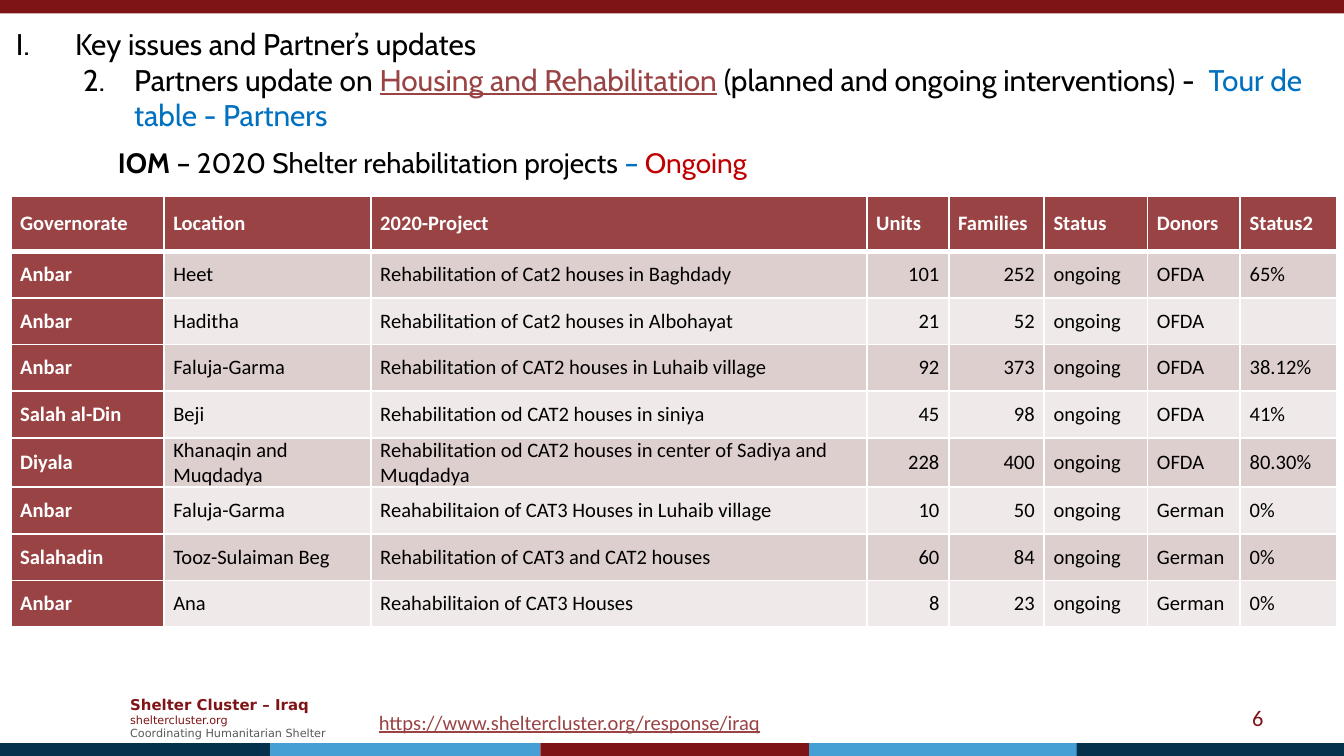
from dataclasses import dataclass

import lxml.etree
import pptx
import pptx.dml.color
import pptx.enum.shapes
import pptx.enum.text
import pptx.oxml.ns
import pptx.util
from pptx.util import Inches

COLORS = {
    "maroon": "7F1416", "brick": "994345", "navy": "04314C", "sky": "459FD5",
    "blue": "0070C0", "red": "C00000", "gray": "595959", "black": "000000",
    "white": "FFFFFF", "band_dark": "DECFCF", "band_light": "EFE9E9",
}
ALIGN = pptx.enum.text.PP_ALIGN
ANCHOR = pptx.enum.text.MSO_ANCHOR


@dataclass
class Span:
    text: str
    color: str = "black"
    bold: bool = False
    underline: bool = False


@dataclass
class Para:
    spans: list[Span]
    font: str
    size: float
    align: ALIGN = ALIGN.LEFT
    margin: float = 0
    indent: float = 0
    level: int = 0
    numbering: str = ""
    start: int = 1


def rgb(name: str):
    return pptx.dml.color.RGBColor.from_string(COLORS[name])


def style(font, span: Span) -> None:
    font.color.rgb = rgb(span.color)
    font.bold = span.bold
    font.underline = span.underline


def write_para(paragraph, para: Para) -> None:
    paragraph.alignment = para.align
    paragraph.level = para.level
    properties = paragraph._p.get_or_add_pPr()
    properties.set("marL", str(Inches(para.margin)))
    properties.set("indent", str(Inches(para.indent)))
    if para.numbering:
        number = lxml.etree.SubElement(properties, pptx.oxml.ns.qn("a:buAutoNum"), type=para.numbering)
        if para.start > 1:
            number.set("startAt", str(para.start))
    paragraph.font.name = para.font
    paragraph.font.size = pptx.util.Pt(para.size)
    if len(para.spans) == 1:
        style(paragraph.font, para.spans[0])
    for span in para.spans:
        run = paragraph.add_run()
        run.text = span.text
        if len(para.spans) > 1:
            style(run.font, span)


def add_text(page, left: float, top: float, width: float, height: float,
             paras: list[Para], anchor=ANCHOR.TOP, wrap: bool = True) -> None:
    box = page.shapes.add_textbox(Inches(left), Inches(top), Inches(width), Inches(height))
    frame = box.text_frame
    frame.word_wrap = wrap
    frame.vertical_anchor = anchor
    for index, para in enumerate(paras):
        write_para(frame.add_paragraph() if index else frame.paragraphs[0], para)


def add_bar(page, left: float, top: float, width: float, color: str) -> None:
    bar = page.shapes.add_shape(pptx.enum.shapes.MSO_SHAPE.RECTANGLE,
                                Inches(left), Inches(top), Inches(width), Inches(0.1))
    bar.shadow.inherit = False
    bar.fill.solid()
    bar.fill.fore_color.rgb = rgb(color)
    bar.line.fill.background()


def add_borders(cell, top: float, bottom: float) -> None:
    """Put white edges before the fill, as the schema orders them."""
    qn = pptx.oxml.ns.qn
    edges = {"a:lnL": 1, "a:lnR": 1, "a:lnT": top, "a:lnB": bottom}
    for position, (tag, points) in enumerate(edges.items()):
        line = lxml.etree.Element(qn(tag), w=str(pptx.util.Pt(points)))
        fill = lxml.etree.SubElement(line, qn("a:solidFill"))
        lxml.etree.SubElement(fill, qn("a:srgbClr"), val=COLORS["white"])
        cell._tc.get_or_add_tcPr().insert(position, line)


def add_project_table(page, rows: list[tuple], widths: list[float]) -> None:
    heights = [0.41] + [25 / 72] * (len(rows) - 1)
    table = page.shapes.add_table(len(rows), len(widths), Inches(0.08), Inches(1.46),
                                  Inches(sum(widths)), Inches(sum(heights))).table
    for column, width in zip(table.columns, widths):
        column.width = Inches(width)
    for row_index, (row, values) in enumerate(zip(table.rows, rows)):
        row.height = Inches(heights[row_index])
        band = "band_dark" if row_index % 2 else "band_light"
        for column_index, value in enumerate(values):
            heading = row_index == 0 or column_index == 0
            cell = table.cell(row_index, column_index)
            cell.fill.solid()
            cell.fill.fore_color.rgb = rgb("brick" if heading else band)
            add_borders(cell, 3 if row_index == 1 else 1, 3 if row_index == 0 else 1)
            cell.vertical_anchor = ANCHOR.MIDDLE
            cell.margin_left = cell.margin_right = Inches(0.07)
            cell.margin_top = cell.margin_bottom = 0
            if value != "":
                span = Span(str(value), "white" if heading else "black", bold=heading)
                align = ALIGN.RIGHT if isinstance(value, int) else ALIGN.LEFT
                write_para(cell.text_frame.paragraphs[0], Para([span], "Calibri", 11, align))


BOTTOM_BARS = [(0, "navy"), (2.01, "sky"), (4.02, "maroon"), (6.02, "sky"), (8.01, "navy")]
COLUMN_WIDTHS = [1.14, 1.54, 3.69, 0.61, 0.71, 0.77, 0.69, 0.72]
PROJECTS = [
    ("Governorate", "Location", "2020-Project", "Units", "Families", "Status", "Donors", "Status2"),
    ("Anbar", "Heet", "Rehabilitation of Cat2 houses in Baghdady", 101, 252, "ongoing", "OFDA", "65%"),
    ("Anbar", "Haditha", "Rehabilitation of Cat2 houses in Albohayat", 21, 52, "ongoing", "OFDA", ""),
    ("Anbar", "Faluja-Garma", "Rehabilitation of CAT2 houses in Luhaib village",
     92, 373, "ongoing", "OFDA", "38.12%"),
    ("Salah al-Din", "Beji", "Rehabilitation od CAT2 houses in siniya", 45, 98, "ongoing", "OFDA", "41%"),
    ("Diyala", "Khanaqin and Muqdadya", "Rehabilitation od CAT2 houses in center of Sadiya and Muqdadya",
     228, 400, "ongoing", "OFDA", "80.30%"),
    ("Anbar", "Faluja-Garma", "Reahabilitaion of CAT3 Houses in Luhaib village",
     10, 50, "ongoing", "German", "0%"),
    ("Salahadin", "Tooz-Sulaiman Beg", "Rehabilitation of CAT3 and CAT2 houses",
     60, 84, "ongoing", "German", "0%"),
    ("Anbar", "Ana", "Reahabilitaion of CAT3 Houses", 8, 23, "ongoing", "German", "0%"),
]


def main() -> None:
    deck = pptx.Presentation()
    deck.slide_width, deck.slide_height = Inches(10), Inches(10 * 9 / 16)
    page = deck.slides.add_slide(deck.slide_layouts[6])

    # Footer and colour bars
    add_text(page, 0.87, 5.12, 1.73, 0.44, [
        Para([Span("Shelter Cluster – Iraq", "maroon", bold=True)], "DejaVu Sans", 8),
        Para([Span("sheltercluster.org", "maroon")], "DejaVu Sans", 6),
        Para([Span("Coordinating Humanitarian Shelter", "gray")], "DejaVu Sans", 6),
    ], ANCHOR.MIDDLE)
    add_bar(page, 0, 0, 10, "maroon")
    for left, color in BOTTOM_BARS:
        add_bar(page, left, 5.53, 2.01, color)
    address = Span("https://www.sheltercluster.org/response/iraq", "brick", underline=True)
    add_text(page, 2.72, 5.23, 3.09, 0.29, [Para([address], "Calibri", 11)], wrap=False)
    add_text(page, 7.17, 5.19, 2.33, 0.3,
             [Para([Span("6", "maroon")], "Calibri", 12, ALIGN.RIGHT)], ANCHOR.MIDDLE)

    # Table with its caption
    add_text(page, 0.28, 1.03, 6.4, 0.35, [Para([
        Span("IOM", bold=True), Span(" – 2020 Shelter rehabilitation projects "),
        Span("– ", "blue"), Span("Ongoing", "red"),
    ], "Cabin", 15, margin=0.5)])
    add_project_table(page, PROJECTS, COLUMN_WIDTHS)

    # Numbered heading
    add_text(page, 0.02, 0.14, 9.95, 0.91, [
        Para([Span("Key issues and Partner’s updates")], "Cabin", 16,
             margin=0.44, indent=-0.44, numbering="romanUcPeriod"),
        Para([Span("Partners update on "),
              Span("Housing and Rehabilitation", "brick", underline=True),
              Span(" (planned and ongoing interventions) - "),
              Span(" Tour de table - Partners", "blue")], "Cabin", 16,
             margin=0.88, indent=-0.38, level=1, numbering="arabicPeriod", start=2),
    ])
    deck.save("out.pptx")


if __name__ == "__main__":
    main()
